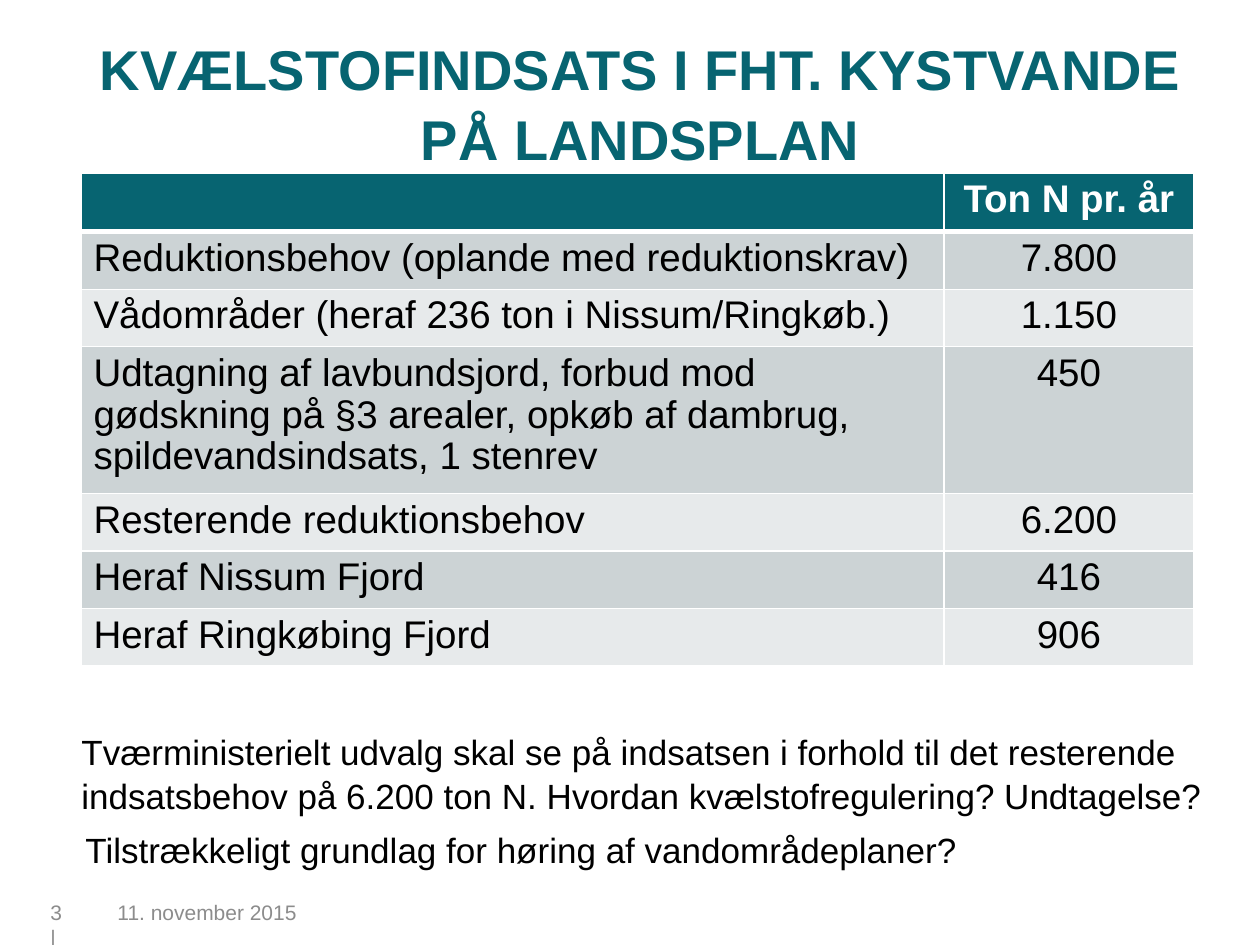
import pptx
import pptx.util
from dataclasses import dataclass
from lxml import etree
from pptx.dml.color import RGBColor
from pptx.enum.text import MSO_ANCHOR, PP_ALIGN
from pptx.oxml.ns import qn

PX = 914400 // 126


@dataclass(frozen=True)
class Theme:
    font: str = "Arial"
    teal: str = "076471"
    white: str = "FFFFFF"
    black: str = "000000"
    grey: str = "8C8C8C"
    bands: tuple = ("CCD3D5", "E7EAEB")
    title: int = 32
    table: int = 22
    body: int = 20
    footer: int = 12


T = Theme()

TITLE = "KVÆLSTOFINDSATS I FHT. KYSTVANDE\vPÅ LANDSPLAN"
ROWS = [
    ("", "Ton N pr. år"),
    ("Reduktionsbehov (oplande med reduktionskrav)", "7.800"),
    ("Vådområder (heraf 236 ton i Nissum/Ringkøb.)", "1.150"),
    ("Udtagning af lavbundsjord, forbud mod gødskning på §3 arealer, "
     "opkøb af dambrug, spildevandsindsats, 1 stenrev", "450"),
    ("Resterende reduktionsbehov", "6.200"),
    ("Heraf Nissum Fjord", "416"),
    ("Heraf Ringkøbing Fjord", "906"),
]
COLUMNS = (863, 250)
ROW_HEIGHT, TALL_ROW, TALL_HEIGHT = 55, 3, 142
NOTES = [
    ((69, 722, 1154, 97),
     "Tværministerielt udvalg skal se på indsatsen i forhold til det resterende\v"
     "indsatsbehov på 6.200 ton N. Hvordan kvælstofregulering? Undtagelse?"),
    ((73, 820, 903, 55), "Tilstrækkeligt grundlag for høring af vandområdeplaner?"),
]
PAGE, DATE = "3\t|", "11. november 2015"
PAGE_TAB = 30


def px(*values):
    return [v * PX for v in values]


def style(p, size, color, bold=False, align=PP_ALIGN.LEFT, spacing=1.0):
    p.alignment = align
    p.line_spacing = spacing
    f = p.font
    f.name, f.size, f.bold = T.font, pptx.util.Pt(size), bold
    f.color.rgb = RGBColor.from_string(color)


def add_text(s, box, text, wrap=True, anchor=MSO_ANCHOR.TOP):
    tf = s.shapes.add_textbox(*px(*box)).text_frame
    tf.word_wrap = wrap
    tf.vertical_anchor = anchor
    p = tf.paragraphs[0]
    p.text = text
    return p


def add_tab(p, pos):
    tabs = etree.SubElement(p._p.get_or_add_pPr(), qn("a:tabLst"))
    etree.SubElement(tabs, qn("a:tab"), pos=str(pos * PX), algn="l")


def add_borders(cell, widths):
    """Put white borders, given in points by side, before the cell's fill."""
    tc_pr = cell._tc.get_or_add_tcPr()
    for i, (side, width) in enumerate(widths.items()):
        ln = etree.Element(qn("a:ln" + side), w=str(pptx.util.Pt(width)))
        fill = etree.SubElement(ln, qn("a:solidFill"))
        etree.SubElement(fill, qn("a:srgbClr"), val=T.white)
        tc_pr.insert(i, ln)


def add_table(s):
    heights = [TALL_HEIGHT if i == TALL_ROW else ROW_HEIGHT for i in range(len(ROWS))]
    table = s.shapes.add_table(len(ROWS), len(COLUMNS),
                               *px(81, 173, sum(COLUMNS), sum(heights))).table
    for column, width in zip(table.columns, COLUMNS):
        column.width = width * PX
    for i, (row, height) in enumerate(zip(ROWS, heights)):
        table.rows[i].height = height * PX
        header = i == 0
        for j, text in enumerate(row):
            cell = table.cell(i, j)
            cell.text = text
            cell.fill.solid()
            cell.fill.fore_color.rgb = RGBColor.from_string(
                T.teal if header else T.bands[(i - 1) % 2])
            add_borders(cell, {"L": 1, "R": 1, "T": 3 if i == 1 else 1,
                               "B": 3 if header else 1})
            style(cell.text_frame.paragraphs[0], T.table,
                  T.white if header else T.black, header,
                  PP_ALIGN.CENTER if j else PP_ALIGN.LEFT, 0.97)


def main():
    prs = pptx.Presentation()
    prs.slide_width, prs.slide_height = px(1260, 945)
    s = prs.slides.add_slide(prs.slide_layouts[6])

    p = add_text(s, (84, 37, 1113, 129), TITLE, anchor=MSO_ANCHOR.MIDDLE)
    style(p, T.title, T.teal, True, PP_ALIGN.CENTER, 1.04)
    add_table(s)
    for box, text in NOTES:
        style(add_text(s, box, text, wrap=False), T.body, T.black, spacing=1.05)

    p = add_text(s, (38, 893, 60, 50), PAGE)
    add_tab(p, PAGE_TAB)
    style(p, T.footer, T.grey)
    style(add_text(s, (105, 893, 294, 50), DATE), T.footer, T.grey)

    prs.save("out.pptx")


if __name__ == "__main__":
    main()
